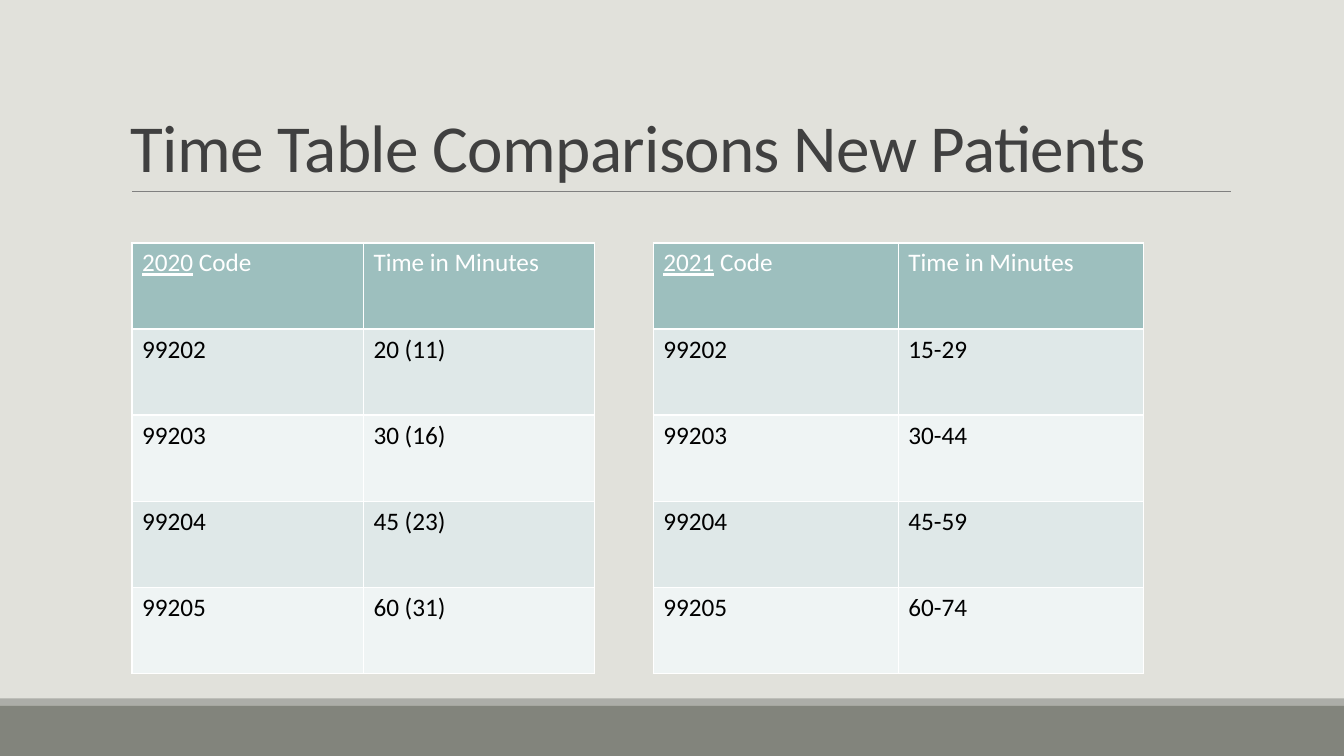
from lxml.etree import SubElement
from pptx import Presentation
from pptx.dml.color import RGBColor
from pptx.enum.shapes import MSO_CONNECTOR, MSO_SHAPE
from pptx.enum.text import MSO_ANCHOR
from pptx.oxml.ns import qn
from pptx.util import Inches, Pt

PAPER = RGBColor(0xE1, 0xE1, 0xDB)
BAND_DARK = RGBColor(0x82, 0x84, 0x7C)
BAND_LIGHT = RGBColor(0xAC, 0xAD, 0xA8)
RULE = RGBColor(0x80, 0x80, 0x80)
TITLE = RGBColor(0x40, 0x40, 0x40)
HEADER = RGBColor(0x9D, 0xBF, 0xBE)
ROW_ODD = RGBColor(0xDF, 0xE8, 0xE8)
ROW_EVEN = RGBColor(0xEF, 0xF4, 0xF4)
WHITE = RGBColor(0xFF, 0xFF, 0xFF)
BLACK = RGBColor(0, 0, 0)
FONT = "Calibri"

CODES = ["99202", "99203", "99204", "99205"]
TIMES_2020 = ["20 (11)", "30 (16)", "45 (23)", "60 (31)"]
TIMES_2021 = ["15-29", "30-44", "45-59", "60-74"]


def add_run(p, text, size, color, underline=None):
    r = p.add_run()
    r.text = text
    r.font.name = FONT
    r.font.size = Pt(size)
    r.font.bold = False
    r.font.color.rgb = color
    r.font.underline = underline
    return r


def add_footer(s, x, y, w, h):
    light = h * 0.12
    bands = [(y + light, h - light, BAND_DARK), (y, light, BAND_LIGHT)]
    for top, height, color in bands:
        sp = s.shapes.add_shape(MSO_SHAPE.RECTANGLE, Inches(x), Inches(top),
                                Inches(w), Inches(height))
        sp.shadow.inherit = False
        sp.fill.solid()
        sp.fill.fore_color.rgb = color
        sp.line.fill.background()


def add_title(s, x, y, w, h, text):
    bottom = Inches(y + h)
    line = s.shapes.add_connector(MSO_CONNECTOR.STRAIGHT, Inches(x + 0.11), bottom,
                                  Inches(x + w + 0.01), bottom)
    line.line.color.rgb = RULE
    line.line.width = Pt(0.5)
    SubElement(line._element.spPr, qn("a:effectLst"))
    tf = s.shapes.add_textbox(Inches(x), Inches(y), Inches(w), Inches(h)).text_frame
    tf.word_wrap = True
    tf.vertical_anchor = MSO_ANCHOR.BOTTOM
    p = tf.paragraphs[0]
    p.line_spacing = 0.85
    r = add_run(p, text, 48, TITLE)
    r._r.get_or_add_rPr().set("spc", "-50")


def style_cell(cell, fill):
    tcPr = cell._tc.get_or_add_tcPr()
    for side in ("lnL", "lnR", "lnT", "lnB"):
        ln = SubElement(tcPr, qn(f"a:{side}"), w=str(Pt(1)))
        solid = SubElement(ln, qn("a:solidFill"))
        SubElement(solid, qn("a:srgbClr"), val=str(WHITE))
    cell.fill.solid()
    cell.fill.fore_color.rgb = fill


def add_time_table(s, x, y, w, h, year, times):
    rows = [(None, "Time in Minutes"), *zip(CODES, times)]
    table = s.shapes.add_table(len(rows), 2, Inches(x), Inches(y),
                               Inches(w), Inches(h)).table
    for i, row in enumerate(rows):
        fill = HEADER if i == 0 else ROW_ODD if i % 2 else ROW_EVEN
        color = BLACK if i else WHITE
        for j, text in enumerate(row):
            cell = table.cell(i, j)
            style_cell(cell, fill)
            p = cell.text_frame.paragraphs[0]
            if text is None:
                add_run(p, year, 18, color, True)
                add_run(p, " Code", 18, color)
            else:
                add_run(p, text, 18, color)


def main():
    prs = Presentation()
    prs.slide_width = Inches(13.33)
    prs.slide_height = Inches(7.5)
    s = prs.slides.add_slide(prs.slide_layouts[6])
    s.background.fill.solid()
    s.background.fill.fore_color.rgb = PAPER
    add_footer(s, 0, 6.93, 13.33, 0.57)
    add_title(s, 1.2, 0.31, 11, 1.59, "Time Table Comparisons New Patients")
    add_time_table(s, 1.31, 2.41, 4.59, 4.27, "2020", TIMES_2020)
    add_time_table(s, 6.48, 2.41, 4.86, 4.27, "2021", TIMES_2021)
    prs.save("out.pptx")


if __name__ == "__main__":
    main()
